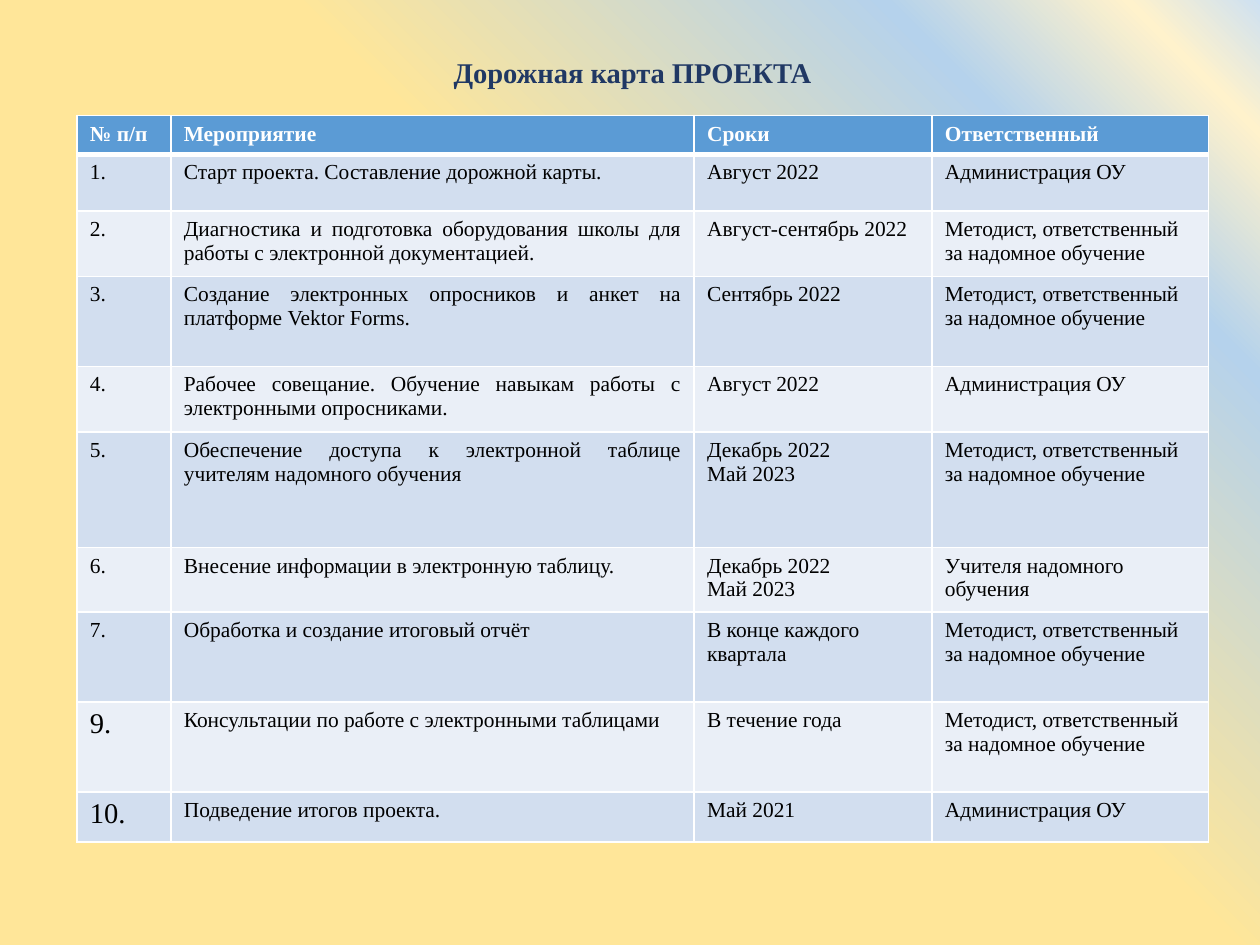
from copy import deepcopy
from lxml import etree
from pptx import Presentation
from pptx import util as u
from pptx.dml.color import RGBColor
from pptx.enum import text
from pptx.oxml.ns import qn

TITLE = "Дорожная карта ПРОЕКТА"
ADMIN = "Администрация ОУ"
GUIDE = "Методист, ответственный за надомное обучение"
HALVES = "Декабрь 2022\nМай 2023"
HEAD = ("№ п/п", "Мероприятие", "Сроки", "Ответственный")
STEPS = [
    ("1.", "Старт проекта. Составление дорожной карты.", "Август 2022", ADMIN),
    ("2.", "Диагностика и подготовка оборудования школы для работы с электронной документацией.",
     "Август-сентябрь 2022", GUIDE),
    ("3.", "Создание электронных опросников и анкет на платформе Vektor Forms.",
     "Сентябрь 2022", GUIDE),
    ("4.", "Рабочее совещание. Обучение навыкам работы с электронными опросниками.",
     "Август 2022", ADMIN),
    ("5.", "Обеспечение доступа к электронной таблице учителям надомного обучения", HALVES, GUIDE),
    ("6.", "Внесение информации в электронную таблицу.", HALVES, "Учителя надомного обучения"),
    ("7.", "Обработка и создание итоговый отчёт", "В конце каждого квартала", GUIDE),
    ("9.", "Консультации по работе с электронными таблицами", "В течение года", GUIDE),
    ("10.", "Подведение итогов проекта.", "Май 2021", ADMIN),
]
LARGE = ("9.", "10.")
JUST = 5
COLS = (0.73, 4.07, 1.85, 2.15)
ROWS = (0.3, 0.44, 0.51, 0.7, 0.51, 0.9, 0.5, 0.7, 0.7, 0.39)
FONT = "Times New Roman"
HUES = {"title": "203864", "head": "5B9BD5", "odd": "D2DEEF", "even": "EAEFF7",
        "white": "FFFFFF", "black": "000000"}
STOPS = ((0, "FFE699"), (56, "FFE699"), (83, "B5D2EC"), (94, "FFF2CC"), (100, "CEE1F2"))


def style(para, size, hue, bold):
    font = para.font
    font.name, font.size, font.bold = FONT, u.Pt(size), bold
    font.color.rgb = RGBColor.from_string(HUES[hue])


def paint(slide):
    fill = slide.background.fill
    fill.gradient()
    fill.gradient_angle = 45
    stops = slide.element.find(".//" + qn("a:gsLst"))
    base = deepcopy(stops[0])
    for stop in list(stops):
        stops.remove(stop)
    for pos, hue in STOPS:
        stop = deepcopy(base)
        stop.set("pos", str(pos * 1000))
        for child in list(stop):
            stop.remove(child)
        etree.SubElement(stop, qn("a:srgbClr")).set("val", hue)
        stops.append(stop)


def edge(cell, head, below):
    props = cell._tc.get_or_add_tcPr()
    for spot, side in enumerate("LRTB"):
        thick = (side == "B" and head) or (side == "T" and below)
        line = etree.Element(qn("a:ln" + side), w=str(u.Pt(3 if thick else 1)))
        solid = etree.SubElement(line, qn("a:solidFill"))
        etree.SubElement(solid, qn("a:srgbClr")).set("val", HUES["white"])
        props.insert(spot, line)


def main():
    deck = Presentation()
    deck.slide_width, deck.slide_height = u.Inches(9.8), u.Inches(7.35)
    slide = deck.slides.add_slide(deck.slide_layouts[6])
    paint(slide)

    box = slide.shapes.add_textbox(*map(u.Inches, (1.34, 0.38, 7.16, 0.37))).text_frame
    box.word_wrap = True
    box.text = TITLE
    box.paragraphs[0].alignment = text.PP_ALIGN.CENTER
    style(box.paragraphs[0], 16, "title", True)

    area = map(u.Inches, (0.6, 0.9, sum(COLS), sum(ROWS)))
    table = slide.shapes.add_table(len(ROWS), len(COLS), *area).table
    for col, width in zip(table.columns, COLS):
        col.width = u.Inches(width)
    for row, height in zip(table.rows, ROWS):
        row.height = u.Inches(height)

    for r, words in enumerate([HEAD] + STEPS):
        head = r == 0
        tone = "head" if head else "odd" if r % 2 else "even"
        for c, word in enumerate(words):
            cell = table.cell(r, c)
            cell.text = word
            cell.fill.solid()
            cell.fill.fore_color.rgb = RGBColor.from_string(HUES[tone])
            edge(cell, head, r == 1)
            for para in cell.text_frame.paragraphs:
                style(para, 16 if word in LARGE else 12, "white" if head else "black", head)
                if c == 1 and 1 <= r <= JUST:
                    para.alignment = text.PP_ALIGN.JUSTIFY
    deck.save("out.pptx")


if __name__ == "__main__":
    main()
